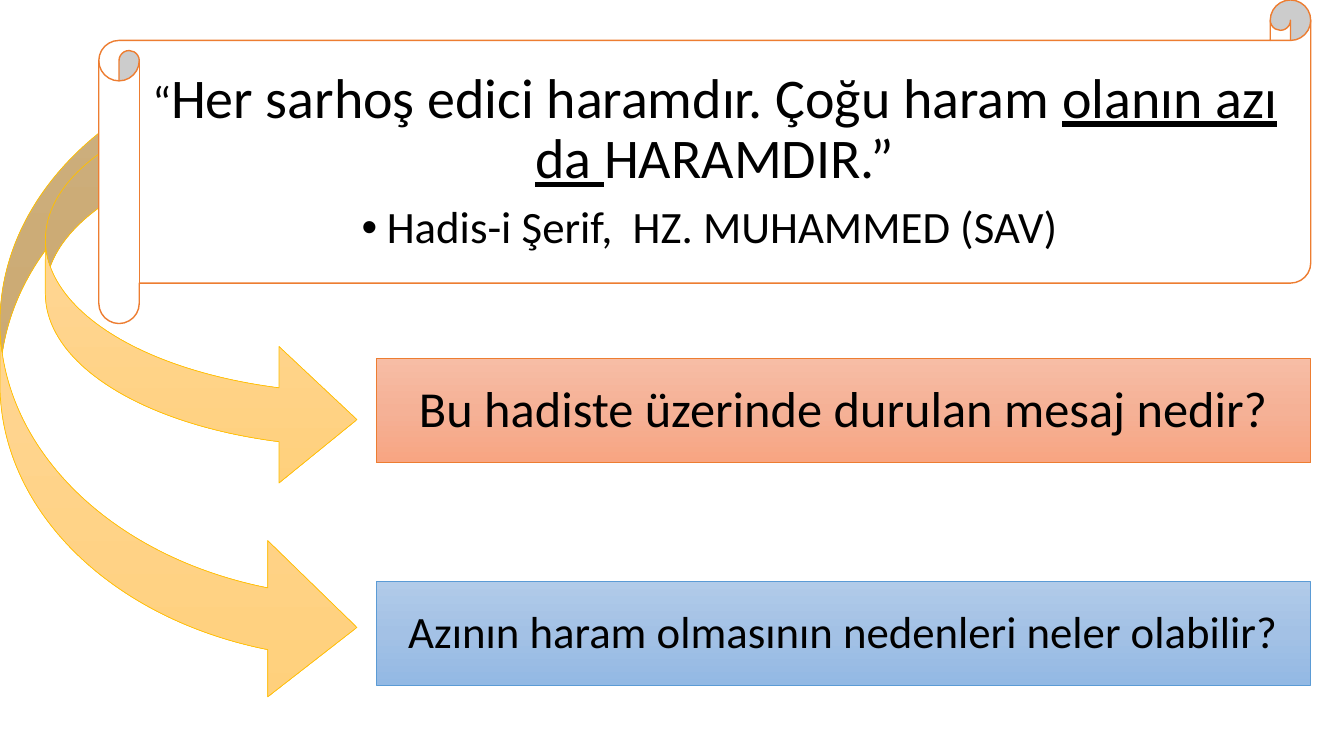
from copy import deepcopy

from lxml.etree import SubElement
from pptx import Presentation
from pptx.dml.color import RGBColor
from pptx.enum.shapes import MSO_SHAPE
from pptx.enum.text import MSO_ANCHOR, PP_ALIGN
from pptx.oxml.ns import qn
from pptx.util import Inches, Pt

FONT = "Calibri"
COLOURS = {
    "text": "000000",
    "paper": "FFFFFF",
    "orange": "ED7D31",
    "gold": "FFC000",
    "blue": "5B9BD5",
}
GRADIENTS = {
    "orange": ("F7BDA5", "F5B196", "F8A582"),
    "gold": ("FFDB9E", "FFD590", "FFD07C"),
    "blue": ("B1CBE9", "A3C1E5", "93B9E4"),
}


def colour(name):
    return RGBColor.from_string(COLOURS[name])


def add_outlined(page, preset, place, line_name, line_width):
    shape = page.shapes.add_shape(preset, *[Inches(length) for length in place])
    shape.shadow.inherit = False
    shape.line.color.rgb = colour(line_name)
    shape.line.width = Pt(line_width)
    return shape


def fill_gradient(shape, name):
    """Fill from top to bottom with three evenly spaced stops."""
    shape.fill.gradient()
    shape.fill.gradient_angle = 270
    first = shape.fill.gradient_stops[0]._gs
    first.addnext(deepcopy(first))
    for index, stop in enumerate(shape.fill.gradient_stops):
        stop.position = index / 2
        stop.color.rgb = RGBColor.from_string(GRADIENTS[name][index])


def write_para(para, spans, space_before=0):
    """Write centred text from (text, size, underlined) spans."""
    para.alignment = PP_ALIGN.CENTER
    para.line_spacing = 0.9
    para.space_before = Pt(space_before)
    for text, size, underlined in spans:
        span = para.add_run()
        span.text = text
        span.font.name = FONT
        span.font.size = Pt(size)
        span.font.underline = underlined
        span.font.color.rgb = colour("text")


def add_bullet(para):
    properties = para._p.get_or_add_pPr()
    properties.set("marL", str(Inches(0.25)))
    properties.set("indent", str(Inches(-0.25)))
    SubElement(properties, qn("a:buFont")).set("typeface", "Arial")
    SubElement(properties, qn("a:buChar")).set("char", "•")


def add_arrow(page, place):
    arrow = add_outlined(page, MSO_SHAPE.CURVED_RIGHT_ARROW, place, "gold", 0.5)
    for index, value in enumerate((0.173, 0.438, 0.25)):
        arrow.adjustments[index] = value
    fill_gradient(arrow, "gold")


def add_question(page, top, text, size, name):
    box = add_outlined(page, MSO_SHAPE.RECTANGLE, (3.73, top, 9.27, 1.03), name, 0.5)
    fill_gradient(box, name)
    box.text_frame.vertical_anchor = MSO_ANCHOR.MIDDLE
    write_para(box.text_frame.paragraphs[0], [(text, size, False)])


def add_scroll(page):
    place = (0.98, 0, 12.02, 3.21)
    scroll = add_outlined(page, MSO_SHAPE.HORIZONTAL_SCROLL, place, "orange", 1)
    scroll.fill.solid()
    scroll.fill.fore_color.rgb = colour("paper")
    frame = scroll.text_frame
    frame.vertical_anchor = MSO_ANCHOR.MIDDLE
    write_para(frame.paragraphs[0], [
        ("“", 32, False),
        ("Her sarhoş edici haramdır. Çoğu haram ", 40, False),
        ("olanın azı da ", 40, True),
        ("HARAMDIR.”", 40, False),
    ], space_before=10)
    source = frame.add_paragraph()
    write_para(source, [("Hadis-i Şerif,  HZ. MUHAMMED (SAV) ", 32, False)], space_before=10)
    add_bullet(source)


def main():
    deck = Presentation()
    deck.slide_width, deck.slide_height = Inches(13.33), Inches(7.5)
    page = deck.slides.add_slide(deck.slide_layouts[6])

    # Arrows from the scroll to the questions
    add_arrow(page, (0, 0.48, 3.54, 6.52))
    add_arrow(page, (0.45, 0.86, 3.09, 3.98))

    # Quotation and questions
    add_question(page, 3.56, "Bu hadiste üzerinde durulan mesaj nedir?", 36, "orange")
    add_scroll(page)
    add_question(page, 5.77, "Azının haram olmasının nedenleri neler olabilir?", 32, "blue")

    deck.save("out.pptx")


if __name__ == "__main__":
    main()
